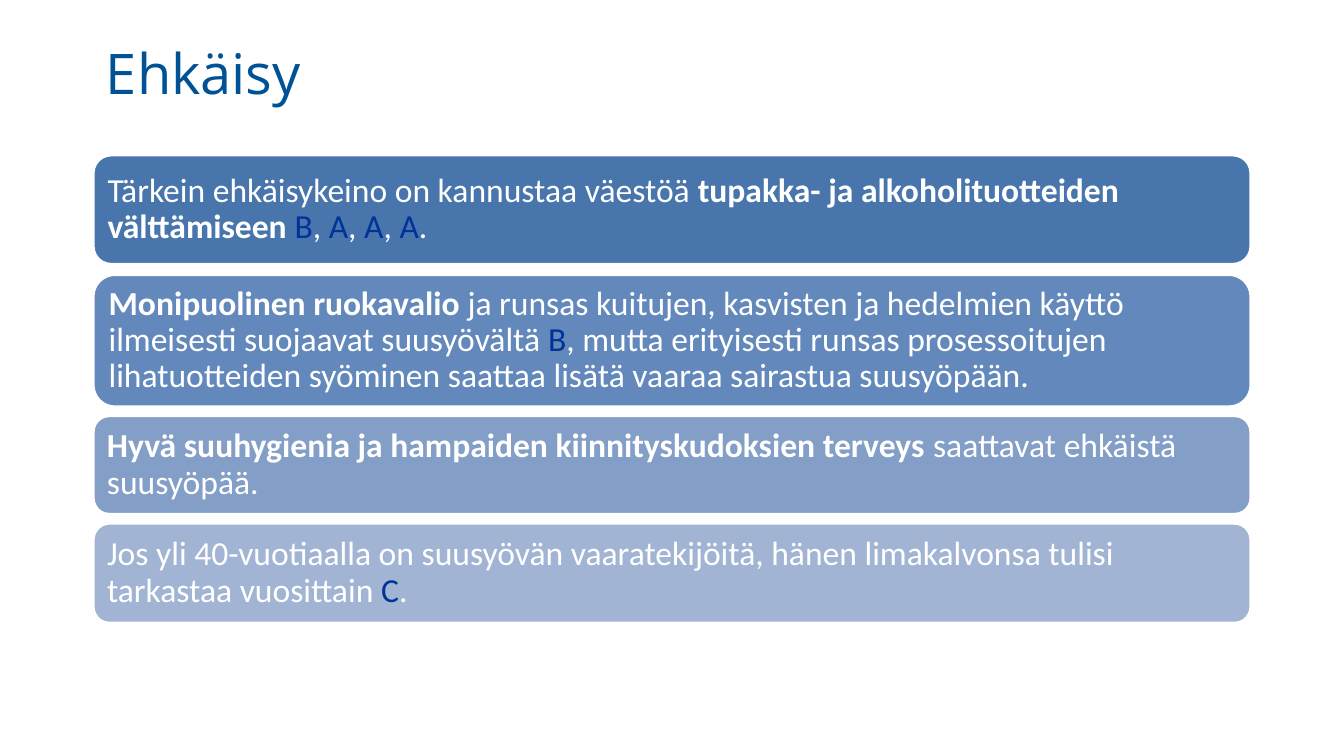
from dataclasses import dataclass

from pptx import Presentation
from pptx.dml.color import RGBColor
from pptx.enum.shapes import MSO_SHAPE as Shape
from pptx.enum.text import MSO_ANCHOR as Anchor, PP_ALIGN as Align
from pptx.util import Inches, Pt

SLIDE_WIDTH = 10
SLIDE_HEIGHT = SLIDE_WIDTH * 9 / 16
LEFT, WIDTH = 0.69, 8.62
WHITE, TITLE_BLUE, GRADE_BLUE = "FFFFFF", "005296", "003399"


@dataclass
class Piece:
    text: str
    bold: bool = False
    color: str = WHITE


@dataclass
class Advice:
    top: float
    height: float
    fill: str
    pieces: list[Piece]


def grade(letter: str) -> Piece:
    return Piece(letter, color=GRADE_BLUE)


ADVICE = [
    Advice(1.15, 0.82, "4875AC", [
        Piece("Tärkein ehkäisykeino on kannustaa väestöä "),
        Piece("tupakka- ja alkoholituotteiden välttämiseen ", bold=True),
        grade("B"), Piece(", "), grade("A"), Piece(", "),
        grade("A"), Piece(", "), grade("A"), Piece("."),
    ]),
    Advice(2.04, 0.99, "6389BC", [
        Piece("Monipuolinen ruokavalio ", bold=True),
        Piece("ja runsas kuitujen, kasvisten ja hedelmien käyttö "
              "ilmeisesti suojaavat suusyövältä "),
        grade("B"),
        Piece(", mutta erityisesti runsas prosessoitujen lihatuotteiden "
              "syöminen saattaa lisätä vaaraa sairastua suusyöpään."),
    ]),
    Advice(3.09, 0.74, "839EC7", [
        Piece("Hyvä suuhygienia ja hampaiden kiinnityskudoksien terveys ", bold=True),
        Piece("saattavat ehkäistä suusyöpää."),
    ]),
    Advice(3.89, 0.75, "A2B4D4", [
        Piece("Jos yli 40-vuotiaalla on suusyövän vaaratekijöitä, "
              "hänen limakalvonsa tulisi tarkastaa vuosittain "),
        grade("C"), Piece("."),
    ]),
]


def rgb(color: str) -> RGBColor:
    return RGBColor.from_string(color)


def style(font, name: str, size: float, color: str, bold: bool = False) -> None:
    font.name = name
    font.size = Pt(size)
    font.bold = bold
    font.color.rgb = rgb(color)


def draw_title(slide, text: str) -> None:
    box = slide.shapes.add_textbox(Inches(LEFT), Inches(0.24), Inches(WIDTH), Inches(0.61))
    text_frame = box.text_frame
    text_frame.word_wrap = True
    text_frame.text = text
    style(text_frame.paragraphs[0].runs[0].font, "Open Sans", 30, TITLE_BLUE)


def draw_advice(slide, advice: Advice) -> None:
    shape = slide.shapes.add_shape(
        Shape.ROUNDED_RECTANGLE,
        Inches(LEFT), Inches(advice.top), Inches(WIDTH), Inches(advice.height))
    shape.shadow.inherit = False
    shape.fill.solid()
    shape.fill.fore_color.rgb = rgb(advice.fill)
    shape.line.color.rgb = rgb(WHITE)
    shape.line.width = Pt(2)

    text_frame = shape.text_frame
    text_frame.word_wrap = True
    text_frame.vertical_anchor = Anchor.MIDDLE
    text_frame.margin_left = text_frame.margin_right = Inches(0.07)
    text_frame.margin_top = text_frame.margin_bottom = Inches(0.07)
    paragraph = text_frame.paragraphs[0]
    paragraph.alignment = Align.LEFT
    paragraph.line_spacing = 0.9
    for piece in advice.pieces:
        run = paragraph.add_run()
        run.text = piece.text
        style(run.font, "Calibri", 18, piece.color, piece.bold)


def main() -> None:
    presentation = Presentation()
    presentation.slide_width = Inches(SLIDE_WIDTH)
    presentation.slide_height = Inches(SLIDE_HEIGHT)
    slide = presentation.slides.add_slide(presentation.slide_layouts[6])
    draw_title(slide, "Ehkäisy")
    for advice in ADVICE:
        draw_advice(slide, advice)
    presentation.save("out.pptx")


if __name__ == "__main__":
    main()
